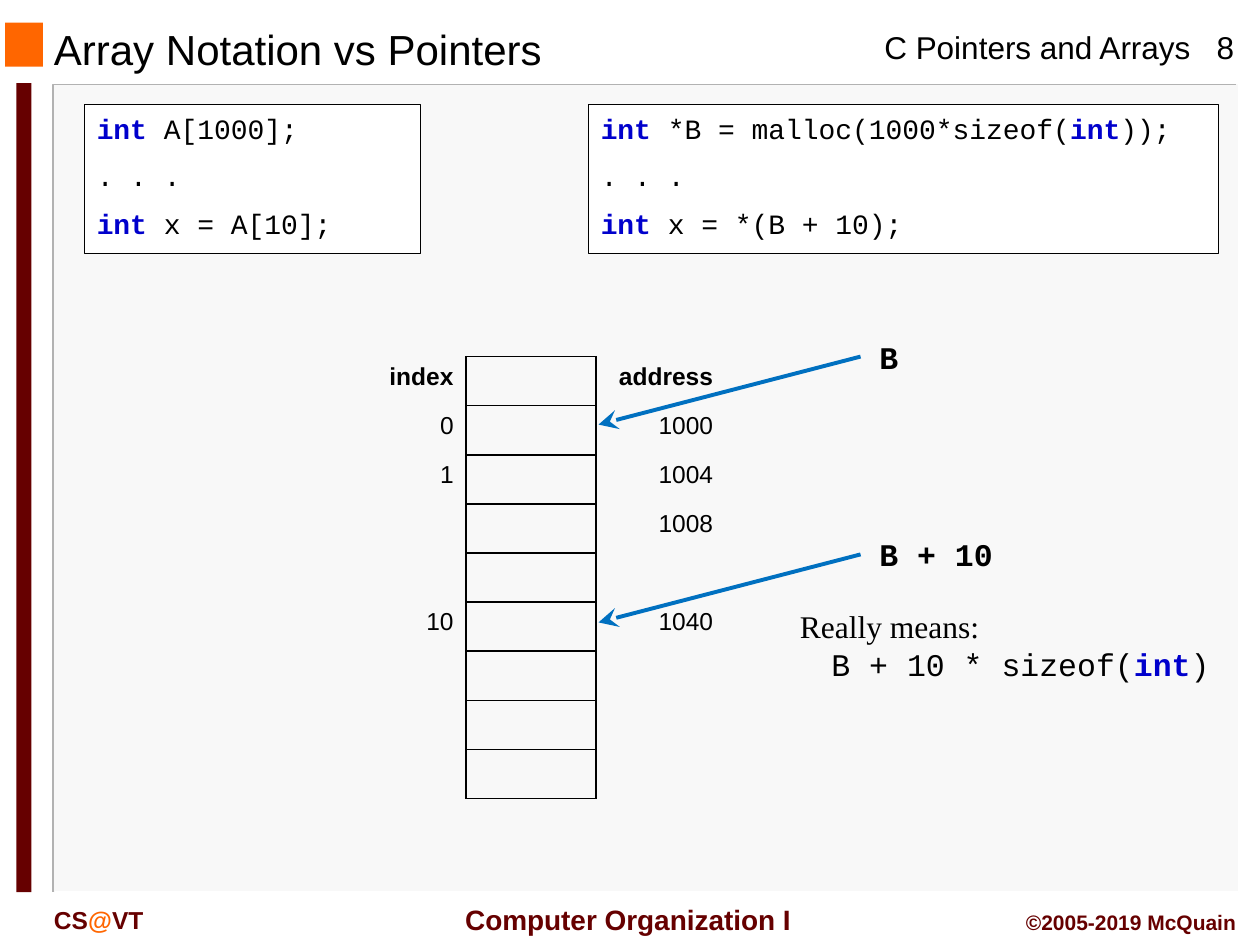
from lxml import etree
from pptx import Presentation
from pptx.dml.color import RGBColor
from pptx.enum.shapes import MSO_CONNECTOR, MSO_SHAPE
from pptx.enum.text import MSO_ANCHOR, PP_ALIGN
from pptx.oxml.ns import qn
from pptx.util import Inches, Pt

LEFT, CENTER, RIGHT = PP_ALIGN.LEFT, PP_ALIGN.CENTER, PP_ALIGN.RIGHT
TOP, MIDDLE = MSO_ANCHOR.TOP, MSO_ANCHOR.MIDDLE
RECTANGLE, STRAIGHT = MSO_SHAPE.RECTANGLE, MSO_CONNECTOR.STRAIGHT

COLORS = {
    "black": "000000",
    "white": "FFFFFF",
    "panel": "F8F8F8",
    "edge": "B2B2B2",
    "orange": "FF6600",
    "maroon": "660000",
    "keyword": "0000CC",
    "arrow": "0070C0",
}
SANS, MONO, SERIF = "Arial", "Courier New", "Times New Roman"
NO_GRID_STYLE = "{2D5ABB26-0587-4C30-8999-92F81FD0307C}"


def rgb(name):
    return RGBColor.from_string(COLORS[name])


def highlight(code):
    spans = []
    for position, piece in enumerate(code.split("int")):
        if position:
            spans.append(("int", {"color": "keyword", "bold": True}))
        if piece:
            spans.append((piece, {}))
    return spans


def write(para, text, align=LEFT, **style):
    para.alignment = align
    spans = [(text, {})] if isinstance(text, str) else text
    for content, changes in spans:
        look = {"font": SANS, "size": 18, "color": "black", "bold": False, **style, **changes}
        span = para.add_run()
        span.text = content
        span.font.name = look["font"]
        span.font.size = Pt(look["size"])
        span.font.bold = look["bold"]
        span.font.color.rgb = rgb(look["color"])


class SlideBuilder:
    def __init__(self, deck):
        self.page = deck.slides.add_slide(deck.slide_layouts[6])
        self.shapes = self.page.shapes

    def block(self, left, top, width, height, fill, line=None):
        box = self.shapes.add_shape(
            RECTANGLE, Inches(left), Inches(top), Inches(width), Inches(height)
        )
        box.shadow.inherit = False
        box.fill.solid()
        box.fill.fore_color.rgb = rgb(fill)
        if line:
            box.line.color.rgb = rgb(line)
            box.line.width = Pt(0.75)
        else:
            box.line.fill.background()
        return box

    def outline(self, points, color):
        start, *corners = [(Inches(x), Inches(y)) for x, y in points]
        builder = self.shapes.build_freeform(*start)
        builder.add_line_segments(corners, close=False)
        edge = builder.convert_to_shape()
        edge.shadow.inherit = False
        edge.fill.background()
        edge.line.color.rgb = rgb(color)
        edge.line.width = Pt(1)

    def label(self, text, left, top, width, height, anchor=TOP, wrap=True, **style):
        box = self.shapes.add_textbox(Inches(left), Inches(top), Inches(width), Inches(height))
        frame = box.text_frame
        frame.word_wrap = wrap
        frame.vertical_anchor = anchor
        write(frame.paragraphs[0], text, **style)
        return frame

    def code(self, lines, left, width):
        frame = self.block(left, 0.83, width, 1.18, "white", "black").text_frame
        frame.word_wrap = True
        frame.vertical_anchor = MIDDLE
        frame.margin_bottom = Inches(0.1)
        for number, line in enumerate(lines):
            para = frame.add_paragraph() if number else frame.paragraphs[0]
            para.space_before = Pt(8 if number else 0)
            write(para, highlight(line), font=MONO, size=16)

    def arrow(self, start, end):
        points = [Inches(value) for value in (*start, *end)]
        link = self.shapes.add_connector(STRAIGHT, *points)
        link.line.color.rgb = rgb("arrow")
        link.line.width = Pt(2.25)
        line = link.line._get_or_add_ln()
        etree.SubElement(line, qn("a:tailEnd"), type="stealth", w="lg", len="lg")
        etree.SubElement(link._element.spPr, qn("a:effectLst"))

    def borders(self, cell, sides):
        properties = cell._tc.get_or_add_tcPr()
        for position, side in enumerate(sides):
            line = etree.Element(qn(f"a:ln{side}"), w=str(Pt(1)))
            fill = etree.SubElement(line, qn("a:solidFill"))
            etree.SubElement(fill, qn("a:srgbClr"), val=COLORS["black"])
            properties.insert(position, line)

    def memory(self, rows, left, top, column_width, row_height):
        frame = self.shapes.add_table(
            len(rows), 3, Inches(left), Inches(top),
            Inches(3 * column_width), Inches(len(rows) * row_height),
        )
        table = frame.table
        table.first_row = table.horz_banding = False
        table._tbl.tblPr.find(qn("a:tableStyleId")).text = NO_GRID_STYLE
        for column in table.columns:
            column.width = Inches(column_width)
        for number, (index, address) in enumerate(rows):
            table.rows[number].height = Inches(row_height)
            for column, (text, sides) in enumerate(
                ((index, "R"), ("", "LRTB"), (address, "L"))
            ):
                cell = table.cell(number, column)
                cell.fill.background()
                self.borders(cell, sides)
                para = cell.text_frame.paragraphs[0]
                if text:
                    write(para, text, RIGHT, size=14, bold=number == 0)
                else:
                    etree.SubElement(para._p, qn("a:endParaRPr"), sz="1400")


def main():
    deck = Presentation()
    deck.slide_width, deck.slide_height = Inches(10), Inches(7.5)
    slide = SlideBuilder(deck)

    slide.block(0.43, 0.67, 9.4, 6.41, "panel")
    slide.outline([(9.81, 0.67), (0.42, 0.67), (0.42, 7.08)], "edge")
    slide.outline([(9.83, 0.67), (9.83, 7.08), (0.44, 7.08)], "white")
    slide.block(0.04, 0.18, 0.3, 0.35, "orange")
    slide.block(0.13, 0.66, 0.12, 6.42, "maroon")

    slide.label("C Pointers and Arrays", 6.92, 0.17, 2.66, 0.4, wrap=False)
    slide.label("8", 9.39, 0.17, 0.67, 0.4, align=CENTER)
    slide.label("Array Notation vs Pointers", 0.33, 0.2, 6.33, 0.38, anchor=MIDDLE, size=24)

    footer = {"color": "maroon", "bold": True}
    slide.label("Computer Organization I", 3.53, 7.11, 2.91, 0.37, anchor=MIDDLE,
                wrap=False, align=CENTER, size=16, **footer)
    slide.label([("CS", {}), ("@", {"color": "orange"}), ("VT", {})],
                0.33, 7.13, 1.5, 0.33, size=14, **footer)
    slide.label("©2005-2019 McQuain", 7.83, 7.17, 2.08, 0.3, align=RIGHT, size=12, **footer)

    slide.code(["int A[1000];", ". . .", "int x = A[10];"], 0.67, 2.67)
    slide.code(["int *B = malloc(1000*sizeof(int));", ". . .", "int x = *(B + 10);"], 4.67, 5)

    rows = [("index", "address"), ("0", "1000"), ("1", "1004"), ("", "1008"), ("", ""),
            ("10", "1040"), ("", ""), ("", ""), ("", "")]
    slide.memory(rows, 2.67, 2.83, 1.03, 0.39)

    for name, top, width in (("B", 2.83, 0.58), ("B + 10", 4.4, 1.29)):
        slide.label(name, 6.88, top - 0.2, width, 0.4, font=MONO, bold=True)
        slide.arrow((6.83, top), (4.75, top + 0.54))

    note = slide.label("Really means:", 6.25, 4.77, 3.58, 0.71, font=SERIF)
    formula = note.add_paragraph()
    formula._p.get_or_add_pPr().set("marL", str(Inches(0.25)))
    write(formula, highlight("B + 10 * sizeof(int)"), font=MONO)

    deck.save("out.pptx")


if __name__ == "__main__":
    main()
